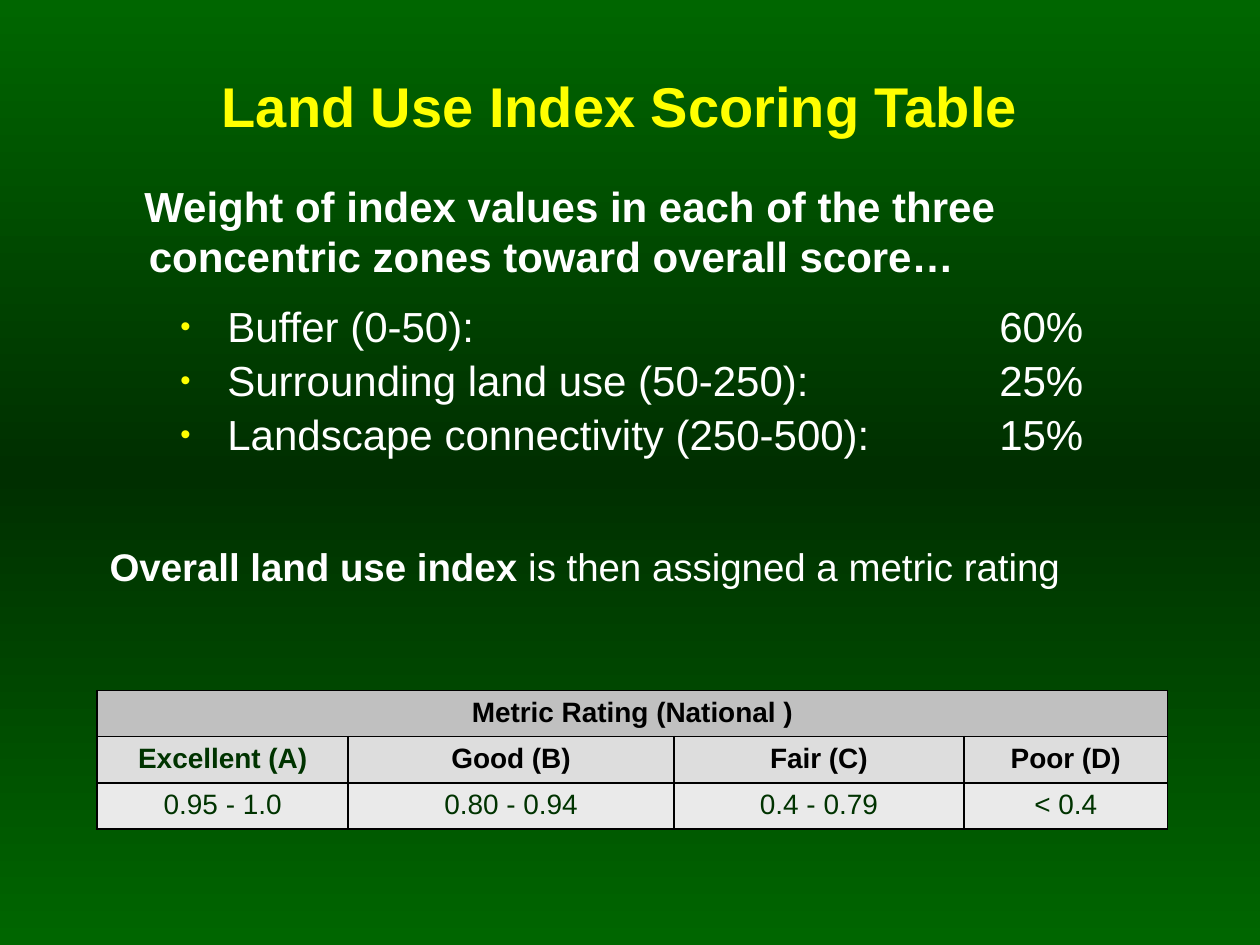
from copy import deepcopy

from lxml import etree
from pptx import Presentation
from pptx.dml.color import RGBColor
from pptx.enum.text import MSO_ANCHOR, MSO_AUTO_SIZE, PP_ALIGN
from pptx.oxml.ns import qn
from pptx.util import Cm, Pt

CENTER = PP_ALIGN.CENTER
LEFT = PP_ALIGN.LEFT
TOP = MSO_ANCHOR.TOP
MIDDLE = MSO_ANCHOR.MIDDLE
NO_FIT = MSO_AUTO_SIZE.NONE

FONT = "Arial"
WHITE, BLACK, YELLOW = "FFFFFF", "000000", "FFFF00"
DARK_GREEN, GREEN, DEEP_GREEN = "003300", "006600", "002F00"

ZONES = [
    ("Buffer (0-50):", "60%"),
    ("Surrounding land use (50-250):", "25%"),
    ("Landscape connectivity (250-500):", "15%"),
]
RATINGS = [
    ("Excellent (A)", "0.95 - 1.0"),
    ("Good (B)", "0.80 - 0.94"),
    ("Fair (C)", "0.4 - 0.79"),
    ("Poor (D)", "< 0.4"),
]
COLUMN_WIDTHS = [5.06, 6.57, 5.84, 4.11]
ROW_HEIGHT = 0.93


def color(value):
    return RGBColor.from_string(value)


def add_text(para, text, size=24, fill=WHITE, bold=False):
    span = para.add_run()
    span.text = text
    span.font.name = FONT
    span.font.size = Pt(size)
    span.font.bold = bold
    span.font.color.rgb = color(fill)


def add_element(parent, tag, **attributes):
    child = etree.SubElement(parent, qn(tag))
    for name, value in attributes.items():
        child.set(name, str(value))
    return child


def set_indent(para, margin, first_line):
    properties = para._p.get_or_add_pPr()
    properties.set("marL", str(Cm(margin)))
    properties.set("indent", str(Cm(first_line)))
    return properties


def place(shape, left, top, width, height, anchor=TOP):
    shape.left, shape.top = Cm(left), Cm(top)
    shape.width, shape.height = Cm(width), Cm(height)
    frame = shape.text_frame
    frame.word_wrap = True
    frame.auto_size = NO_FIT
    frame.vertical_anchor = anchor
    return frame


def paint_background(page):
    fill = page.background.fill
    fill.gradient()
    fill.gradient_angle = 90
    stop_list = fill.gradient_stops[0]._gs.getparent()
    stop_list.insert(1, deepcopy(stop_list[0]))
    for stop, position, value in zip(
        fill.gradient_stops, (0, 0.5, 1), (GREEN, DEEP_GREEN, GREEN)
    ):
        stop.position = position
        stop.color.rgb = color(value)


def add_statement(page, spans, top, height, size, first_line):
    box = page.shapes.add_textbox(0, 0, 0, 0)
    para = place(box, 0.69, top, 24, height).paragraphs[0]
    set_indent(para, 2.06, first_line)
    for text, bold in spans:
        add_text(para, text, size=size, bold=bold)


def fill_zone_list(frame):
    for number, (zone, weight) in enumerate(ZONES):
        para = frame.add_paragraph() if number else frame.paragraphs[0]
        para.level = 1
        para.alignment = LEFT
        para.line_spacing = 0.9
        para.space_before = Pt(4.8 if number else 0)
        properties = set_indent(para, 2.22, -0.95)
        bullet_color = add_element(properties, "a:buClr")
        add_element(bullet_color, "a:srgbClr", val=YELLOW)
        add_element(properties, "a:buSzPct", val=70000)
        add_element(properties, "a:buFont", typeface=FONT)
        add_element(properties, "a:buChar", char="•")
        tabs = add_element(properties, "a:tabLst")
        add_element(tabs, "a:tab", pos=Cm(17.78), algn="l")
        add_text(para, f"{zone}\t{weight}")


def format_cell(cell, text, background, fill, bold=True):
    properties = cell._tc.get_or_add_tcPr()
    for side in ("a:lnL", "a:lnR", "a:lnT", "a:lnB"):
        line = add_element(properties, side, w=Pt(1))
        add_element(add_element(line, "a:solidFill"), "a:srgbClr", val=BLACK)
    cell.fill.solid()
    cell.fill.fore_color.rgb = color(background)
    para = cell.text_frame.paragraphs[0]
    para.alignment = CENTER
    if text:
        add_text(para, text, size=16, fill=fill, bold=bold)


def add_rating_table(page):
    table = page.shapes.add_table(
        3, len(RATINGS), Cm(1.96), Cm(13.92),
        Cm(sum(COLUMN_WIDTHS)), Cm(3 * ROW_HEIGHT),
    ).table
    for row in table.rows:
        row.height = Cm(ROW_HEIGHT)
    for index, (rating, score_range) in enumerate(RATINGS):
        table.columns[index].width = Cm(COLUMN_WIDTHS[index])
        heading = "" if index else "Metric Rating (National )"
        rating_color = BLACK if index else DARK_GREEN
        format_cell(table.cell(0, index), heading, "C0C0C0", BLACK)
        format_cell(table.cell(1, index), rating, "DDDDDD", rating_color)
        format_cell(table.cell(2, index), score_range, "EAEAEA", DARK_GREEN, bold=False)
    table.cell(0, 0).merge(table.cell(0, len(RATINGS) - 1))


def main():
    deck = Presentation()
    deck.slide_width, deck.slide_height = Cm(25.4), Cm(19.05)
    page = deck.slides.add_slide(deck.slide_layouts[1])
    paint_background(page)

    # Title
    title = place(page.shapes.title, 1.07, 1.55, 22.86, 1.14, anchor=MIDDLE)
    title.paragraphs[0].alignment = CENTER
    add_text(title.paragraphs[0], "Land Use Index Scoring Table", size=32, fill=YELLOW, bold=True)

    # Zone weights
    weight_heading = (
        "Weight of index values in each of the three "
        "concentric zones toward overall score…"
    )
    add_statement(page, [(weight_heading, True)], 3.51, 2.3, 24, -0.09)
    fill_zone_list(place(page.placeholders[1], 2.11, 6.05, 20.75, 3.38))

    # Overall rating
    overall = [("Overall land use index", True), (" is then assigned a metric rating", False)]
    add_statement(page, overall, 10.82, 1.47, 22, -0.79)
    add_rating_table(page)

    deck.save("out.pptx")


if __name__ == "__main__":
    main()
